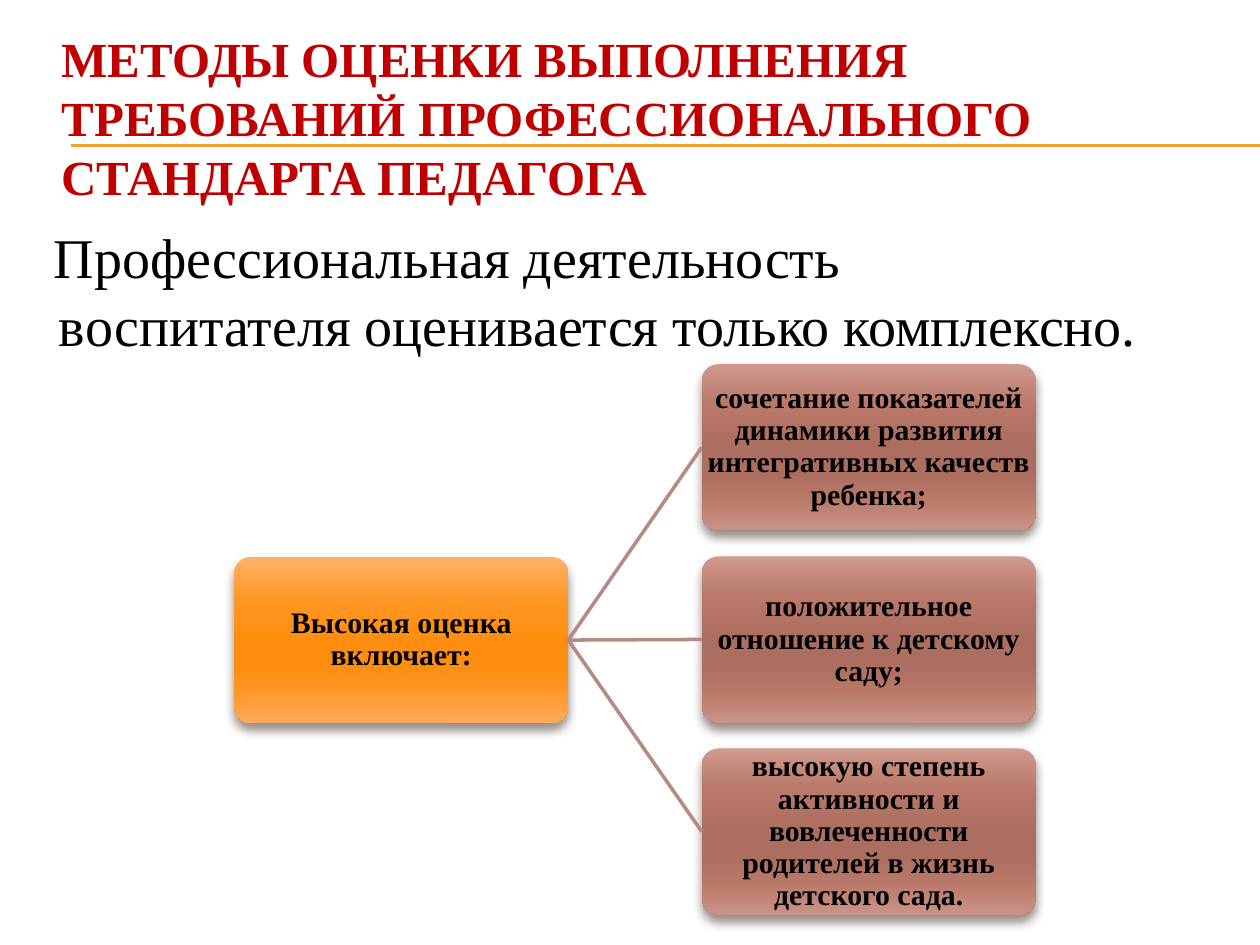
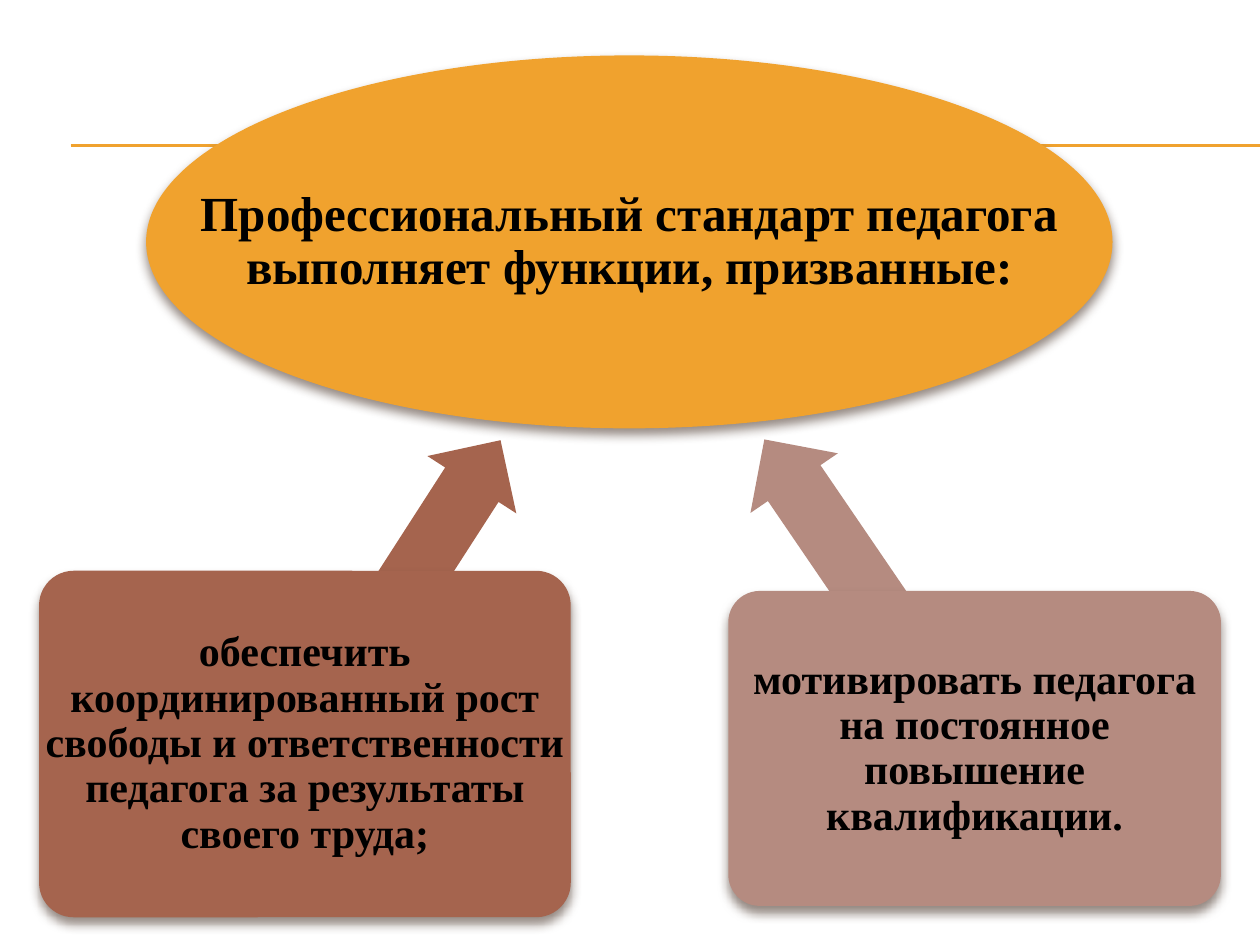
"""Builds two slides on assessing the professional standard for teachers."""
from dataclasses import dataclass

from lxml import etree
from pptx import Presentation
from pptx.dml.color import RGBColor
from pptx.enum.shapes import MSO_CONNECTOR, MSO_SHAPE
from pptx.enum.text import MSO_ANCHOR, PP_ALIGN
from pptx.oxml.ns import qn
from pptx.util import Inches, Pt

ELLIPSE = MSO_SHAPE.OVAL
ROUNDED = MSO_SHAPE.ROUNDED_RECTANGLE
LEFT_ARROW = MSO_SHAPE.LEFT_ARROW
STRAIGHT = MSO_CONNECTOR.STRAIGHT
TOP, MIDDLE = MSO_ANCHOR.TOP, MSO_ANCHOR.MIDDLE
LEFT, CENTER = PP_ALIGN.LEFT, PP_ALIGN.CENTER
LEFT_SIDE, RIGHT_SIDE = 1, 3


@dataclass(frozen=True)
class Theme:
    font: str = "Times New Roman"
    title: str = "C00000"
    text: str = "000000"
    gold: str = "F0A22E"
    brown: str = "A5644E"
    rose: str = "B58B80"
    shadow: str = "4E3B30"
    orange_blend: tuple = ("FFB16A", "FF9826", "FF8D0F", "FF8D0F", "FF9724", "FFAA5C")
    brown_blend: tuple = ("D09A8D", "B97869", "AB6E60", "AB6E60", "B87868", "CA9386")
    blend_stops: tuple = (0, 25, 50, 65, 80, 100)
    title_size: int = 28
    body_size: int = 32
    tree_size: int = 17
    head_size: int = 28
    function_size: int = 24


theme = Theme()


def write_text(shape, text, size, color=theme.text, bold=True, align=CENTER,
               spacing=0.9, anchor=MIDDLE, wrap=False):
    frame = shape.text_frame
    for name, value in {"word_wrap": wrap, "vertical_anchor": anchor}.items():
        setattr(frame, name, value)
    para = frame.paragraphs[0]
    para.text = text
    for name, value in {"alignment": align, "line_spacing": spacing}.items():
        setattr(para, name, value)
    for span in para.runs:
        for name, value in {"name": theme.font, "size": Pt(size), "bold": bold}.items():
            setattr(span.font, name, value)
        span.font.color.rgb = RGBColor.from_string(color)
    return para


def add_box(page, kind, place, fill, lines=(), size=None):
    box = page.shapes.add_shape(kind, *map(Inches, place))
    box.line.fill.background()
    box.shadow.inherit = False
    properties = box._element.spPr
    if isinstance(fill, str):
        box.fill.solid()
        box.fill.fore_color.rgb = RGBColor.from_string(fill)
    else:
        box.fill.gradient()
        box.fill.gradient_angle = 270
        stops = properties.find(".//" + qn("a:gsLst"))
        stops.clear()
        for position, color in zip(theme.blend_stops, fill):
            stop = etree.SubElement(stops, qn("a:gs"), pos=str(position * 1000))
            etree.SubElement(stop, qn("a:srgbClr"), val=color)
    if kind == ROUNDED:
        box.adjustments[0] = 0.1
    if lines:
        write_text(box, "\v".join(lines), size)
        shadow = etree.SubElement(
            properties.find(qn("a:effectLst")), qn("a:outerShdw"), blurRad=str(Pt(6)),
            dist=str(Pt(4)), dir="5400000", rotWithShape="0")
        color = etree.SubElement(shadow, qn("a:srgbClr"), val=theme.shadow)
        etree.SubElement(color, qn("a:alpha"), val="60000")
    return box


deck = Presentation()
deck.slide_width, deck.slide_height = Inches(10), Inches(7.5)
methods_page, functions_page = [
    deck.slides.add_slide(deck.slide_layouts[6]) for _ in range(2)]

connectors = []
for page in (methods_page, functions_page):
    for height in (1.15, 1.16):
        rule = page.shapes.add_connector(
            STRAIGHT, Inches(0.56), Inches(height), Inches(10), Inches(height))
        connectors.append((rule, theme.gold, 0.75))

title = methods_page.shapes.add_textbox(
    Inches(0.39), Inches(0.18), Inches(9.38), Inches(1.5))
write_text(title, "МЕТОДЫ ОЦЕНКИ ВЫПОЛНЕНИЯ ТРЕБОВАНИЙ ПРОФЕССИОНАЛЬНОГО "
           "СТАНДАРТА ПЕДАГОГА", theme.title_size, color=theme.title, align=LEFT,
           spacing=1.0, anchor=TOP, wrap=True)

body = methods_page.shapes.add_textbox(
    Inches(0), Inches(1.72), Inches(9.13), Inches(1.33))
body_para = write_text(
    body, "Профессиональная деятельность воспитателя оценивается только комплексно.",
    theme.body_size, bold=False, align=LEFT, spacing=1.0, anchor=TOP, wrap=True)
for name, value in {"marL": Inches(0.37), "indent": Inches(-0.04)}.items():
    body_para._p.get_or_add_pPr().set(name, str(value))

box_width, box_height = 2.65, 1.32
criteria = [
    ("сочетание показателей", "динамики развития", "интегративных качеств", "ребенка;"),
    ("положительное", "отношение к детскому", "саду;"),
    ("высокую степень", "активности и", "вовлеченности", "родителей в жизнь",
     "детского сада."),
]
high_mark = add_box(methods_page, ROUNDED, (1.86, 4.42, box_width, box_height),
                    theme.orange_blend, ("Высокая оценка", "включает:"), theme.tree_size)
for index, lines in enumerate(criteria):
    top = 2.89 + index * 3.05 / 2
    criterion = add_box(methods_page, ROUNDED, (5.57, top, box_width, box_height),
                        theme.brown_blend, lines, theme.tree_size)
    branch = methods_page.shapes.add_connector(STRAIGHT, 0, 0, 0, 0)
    branch.begin_connect(high_mark, RIGHT_SIDE)
    branch.end_connect(criterion, LEFT_SIDE)
    connectors.append((branch, theme.rose, 2))

for connector, color, width in connectors:
    connector.line.color.rgb = RGBColor.from_string(color)
    connector.line.width = Pt(width)
    etree.SubElement(connector._element.spPr, qn("a:effectLst"))

add_box(functions_page, ELLIPSE, (1.16, 0.44, 7.67, 2.96), theme.gold,
        ("Профессиональный стандарт педагога", "выполняет функции, призванные:"),
        theme.head_size)
functions = [
    (theme.brown, (1.76, 4.28, 2.87, 0.84), 122.8, (0.31, 4.53, 4.22, 2.75),
     ("обеспечить", "координированный рост", "свободы и ответственности",
      "педагога за результаты", "своего труда;")),
    (theme.rose, (5.42, 4.29, 2.96, 0.84), 55.7, (5.78, 4.69, 3.91, 2.5),
     ("мотивировать педагога", "на постоянное", "повышение", "квалификации.")),
]
for color, arrow_place, angle, box_place, lines in functions:
    arrow = add_box(functions_page, LEFT_ARROW, arrow_place, color)
    arrow.rotation = angle
    arrow.adjustments[0], arrow.adjustments[1] = 0.6, 0.5
    add_box(functions_page, ROUNDED, box_place, color, lines, theme.function_size)

deck.save("out.pptx")
